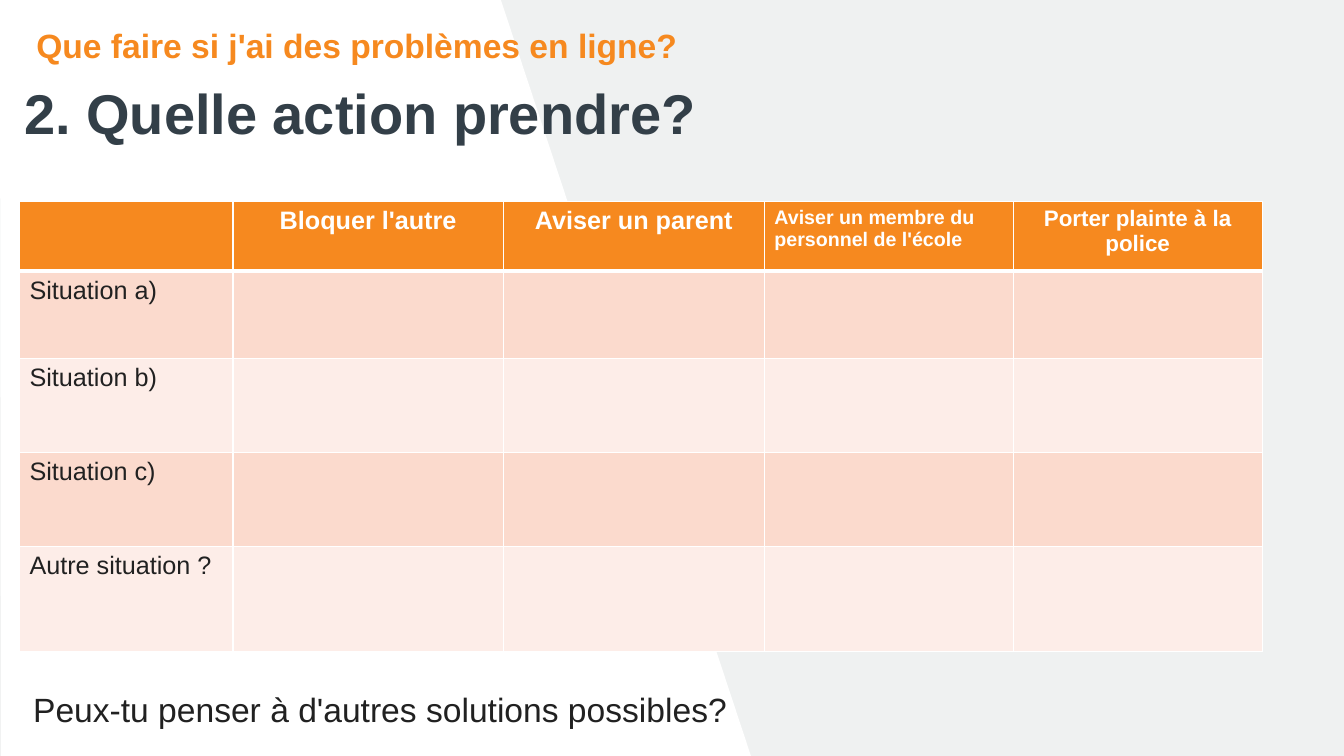
from dataclasses import dataclass

from lxml import etree
from pptx import Presentation
from pptx.dml.color import RGBColor
from pptx.enum.text import MSO_ANCHOR, MSO_AUTO_SIZE, PP_ALIGN
from pptx.oxml.ns import qn
from pptx.util import Pt

LEFT, CENTER = PP_ALIGN.LEFT, PP_ALIGN.CENTER
TOP, BOTTOM = MSO_ANCHOR.TOP, MSO_ANCHOR.BOTTOM
NO_FIT, GROW = MSO_AUTO_SIZE.NONE, MSO_AUTO_SIZE.SHAPE_TO_FIT_TEXT

COLORS = {
    "background": "EFF1F1",
    "white": "FFFFFF",
    "slate": "333F48",
    "orange": "F6891F",
    "ink": "212121",
    "band_dark": "FBDACD",
    "band_light": "FDEDE8",
}
FRAME_FORMAT = {
    "margin_left": 0, "margin_top": 0, "margin_right": 0, "margin_bottom": 0,
    "word_wrap": True, "auto_size": NO_FIT,
}
WEDGE = [(0, 0), (357.8, 0), (536.4, 540), (0.7, 540)]
COLUMN_WIDTHS = [152.6, 193, 186.5, 177.8, 177.8]
ROW_HEIGHTS = [49.7, 62.6, 67, 67, 74.9]


@dataclass
class Label:
    text: str
    size: float
    color: str
    bold: bool = False
    align: PP_ALIGN = LEFT


@dataclass
class Area:
    left: float
    top: float
    width: float
    height: float

    def lengths(self) -> list:
        return [Pt(value) for value in (self.left, self.top, self.width, self.height)]


TITLE = Label("2. Quelle action prendre?", 40, "slate", True)
TOPIC = Label("Que faire si j'ai des problèmes en ligne?", 24, "orange", True)
QUESTION = Label("Peux-tu penser à d'autres solutions possibles?", 24, "ink")
ACTIONS = [
    Label("Bloquer l'autre", 18, "white", True, CENTER),
    Label("Aviser un parent", 18, "white", True, CENTER),
    Label("Aviser un membre du personnel de l'école", 14, "white", True),
    Label("Porter plainte à la police", 16, "white", True, CENTER),
]
SITUATIONS = [
    Label(text, 18, "ink")
    for text in ("Situation a)", "Situation b)", "Situation c)", "Autre situation ?")
]


def rgb(name: str) -> RGBColor:
    return RGBColor.from_string(COLORS[name])


def apply_format(target, values: dict) -> None:
    for name, value in values.items():
        setattr(target, name, value)


def write(frame, label: Label) -> None:
    para = frame.paragraphs[0]
    para.alignment = label.align
    span = para.add_run()
    span.text = label.text
    apply_format(span.font, {"name": "Arial", "size": Pt(label.size), "bold": label.bold})
    span.font.color.rgb = rgb(label.color)


def fill_placeholder(box, area: Area, label: Label, anchor: MSO_ANCHOR) -> None:
    apply_format(box, dict(zip(("left", "top", "width", "height"), area.lengths())))
    frame = box.text_frame
    apply_format(frame, {**FRAME_FORMAT, "vertical_anchor": anchor})
    para = frame.paragraphs[0]
    properties = para._p.get_or_add_pPr()
    properties.set("marL", "0")
    properties.set("indent", "0")
    etree.SubElement(properties, qn("a:buNone"))
    para.space_before = Pt(0)
    write(frame, label)


def draw_wedge(page) -> None:
    points = [(Pt(x), Pt(y)) for x, y in WEDGE]
    builder = page.shapes.build_freeform(*points[0], scale=1.0)
    builder.add_line_segments(points[1:], close=True)
    wedge = builder.convert_to_shape()
    wedge.shadow.inherit = False
    wedge.fill.solid()
    wedge.fill.fore_color.rgb = rgb("white")
    wedge.line.fill.background()
    wedge.element.getparent().insert(2, wedge.element)


def draw_borders(cell, row: int) -> None:
    properties = cell._tc.get_or_add_tcPr()
    widths = {"L": 1, "R": 1, "T": 3 if row == 1 else 1, "B": 3 if row == 0 else 1}
    for index, (side, width) in enumerate(widths.items()):
        line = etree.Element(qn(f"a:ln{side}"), w=str(Pt(width)))
        fill = etree.SubElement(line, qn("a:solidFill"))
        etree.SubElement(fill, qn("a:srgbClr"), val=COLORS["white"])
        properties.insert(index, line)


def draw_table(page) -> None:
    area = Area(13.9, 144, sum(COLUMN_WIDTHS), sum(ROW_HEIGHTS))
    table = page.shapes.add_table(len(ROW_HEIGHTS), len(COLUMN_WIDTHS), *area.lengths()).table
    for column, width in zip(table.columns, COLUMN_WIDTHS):
        column.width = Pt(width)
    for row, height in zip(table.rows, ROW_HEIGHTS):
        row.height = Pt(height)
    row_fills = ["orange"] + ["band_dark", "band_light"] * 2
    for row_index, row_fill in enumerate(row_fills):
        for cell in table.rows[row_index].cells:
            cell.fill.solid()
            cell.fill.fore_color.rgb = rgb(row_fill)
            draw_borders(cell, row_index)
    for column_index, action in enumerate(ACTIONS, 1):
        write(table.cell(0, column_index).text_frame, action)
    for row_index, situation in enumerate(SITUATIONS, 1):
        write(table.cell(row_index, 0).text_frame, situation)


def main() -> None:
    deck = Presentation()
    apply_format(deck, {"slide_width": Pt(960), "slide_height": Pt(540)})
    page = deck.slides.add_slide(deck.slide_layouts[1])
    page.background.fill.solid()
    page.background.fill.fore_color.rgb = rgb("background")

    draw_wedge(page)
    title, topic = page.shapes.title, page.placeholders[1]
    fill_placeholder(title, Area(17.3, 61.2, 488.2, 67.7), TITLE, TOP)
    title.text_frame.paragraphs[0].line_spacing = 0.9
    fill_placeholder(topic, Area(25.9, 15.1, 496.1, 31.7), TOPIC, BOTTOM)
    draw_table(page)

    question = page.shapes.add_textbox(*Area(16.6, 488.9, 515.5, 36).lengths())
    apply_format(question.text_frame, {"word_wrap": False, "auto_size": GROW})
    write(question.text_frame, QUESTION)
    deck.save("out.pptx")


if __name__ == "__main__":
    main()
